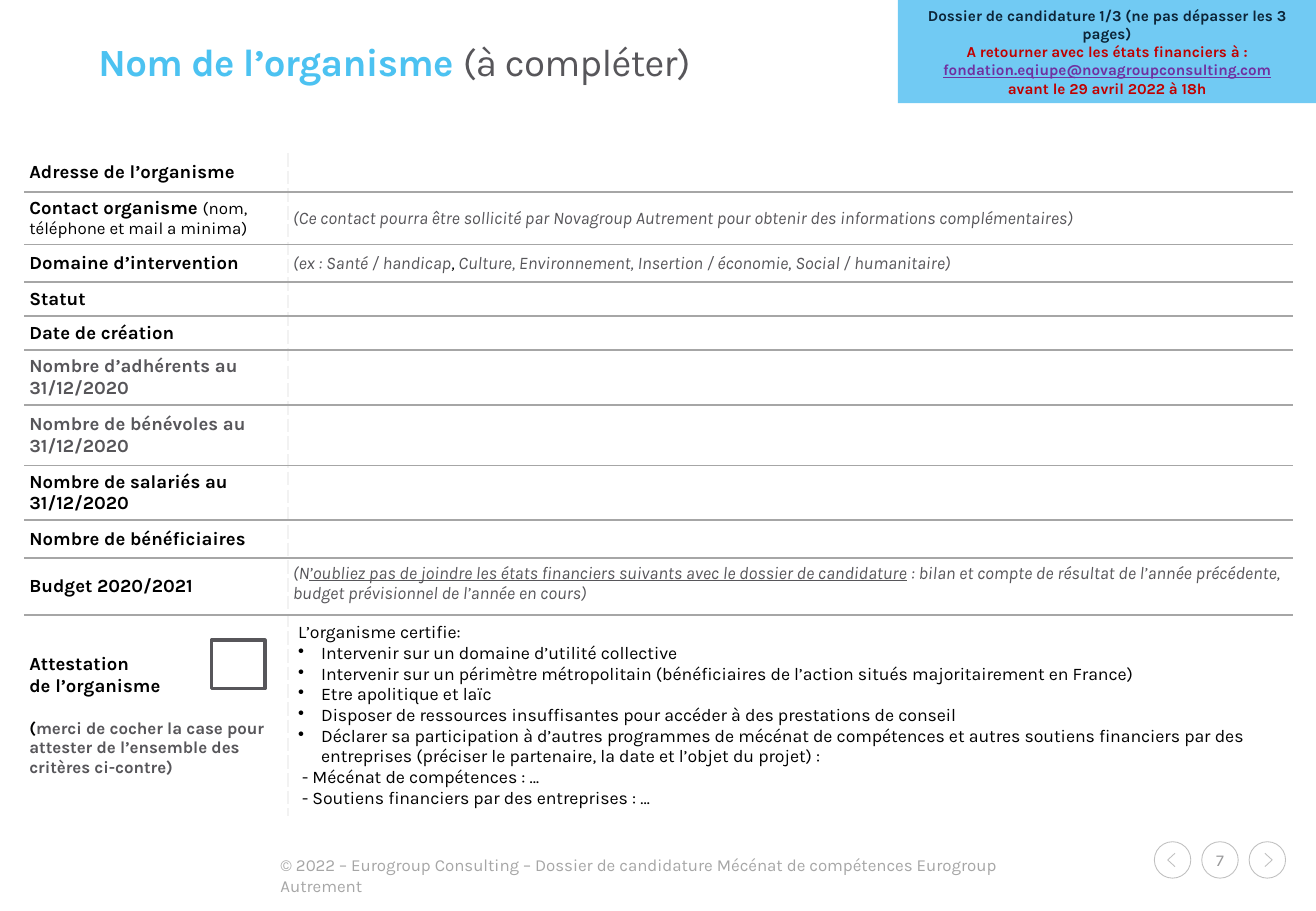
from lxml import etree
from pptx import Presentation
from pptx.dml.color import RGBColor
from pptx.enum.shapes import MSO_SHAPE
from pptx.enum.text import MSO_ANCHOR, PP_ALIGN
from pptx.oxml.ns import qn
from pptx.util import Inches, Pt

RECT, CIRCLE = MSO_SHAPE.RECTANGLE, MSO_SHAPE.OVAL
TOP, MIDDLE = MSO_ANCHOR.TOP, MSO_ANCHOR.MIDDLE
LEFT, CENTER = PP_ALIGN.LEFT, PP_ALIGN.CENTER

COLORS = {
    "white": "FFFFFF", "black": "000000", "grey": "57565A", "rule": "A6A6A6",
    "dash": "F2F2F2", "button": "BFBFBF", "number": "9A9A9B", "title": "4CC2F1",
    "banner": "71CAF3", "navy": "0C2437", "red": "C00000", "purple": "7030A0",
}
FONT = "Karla"
WIDTH, HEIGHT = 10.83, 7.5


def grid(units):
    """Length of a number of grid columns or rows, twelve to the inch."""
    return Inches(units / 12)


def para(*spans, **style):
    """A paragraph: spans are strings or (string, style changes) pairs."""
    return spans, style


class Page:
    def __init__(self, deck):
        self.slide = deck.slides.add_slide(deck.slide_layouts[6])
        self.shapes = self.slide.shapes

    def color(self, name):
        return RGBColor.from_string(COLORS[name])

    def set_font(self, font, size=None, color=None, bold=None, italic=None, underline=None):
        font.name = FONT
        if size:
            font.size = Pt(size)
        if color:
            font.color.rgb = self.color(color)
        font.bold, font.italic, font.underline = bold, italic, underline

    def set_paras(self, frame, paras, align=LEFT, spacing=None, tracking=None):
        for index, (spans, options) in enumerate(paras):
            style = dict(options)
            item = frame.paragraphs[0] if index == 0 else frame.add_paragraph()
            indent, bullet = style.pop("indent", 0), style.pop("bullet", None)
            before = style.pop("before", None)
            if indent:
                properties = item._p.get_or_add_pPr()
                properties.set("marL", str(grid(indent)))
                if bullet:
                    properties.set("indent", str(-grid(indent)))
                    etree.SubElement(properties, qn("a:buChar"), char=bullet)
            item.alignment = align
            if spacing:
                item.line_spacing = spacing
            if before:
                item.space_before = Pt(before)
            if all(isinstance(span, str) for span in spans):
                self.set_font(item.font, **style)
            for span in spans:
                text, changes = (span, {}) if isinstance(span, str) else span
                run = item.add_run()
                run.text = text
                if len(spans) > 1:
                    self.set_font(run.font, **{**style, **changes})
                if tracking:
                    run._r.get_or_add_rPr().set("spc", str(tracking))

    def text(self, place, paras, anchor=TOP, inset=True, **layout):
        frame = self.shapes.add_textbox(*map(grid, place)).text_frame
        frame.word_wrap = True
        frame.vertical_anchor = anchor
        if not inset:
            frame.margin_left = frame.margin_right = 0
            frame.margin_top = frame.margin_bottom = 0
        self.set_paras(frame, paras, **layout)

    def paint(self, shape, fill, line, weight):
        shape.shadow.inherit = False
        if fill:
            shape.fill.solid()
            shape.fill.fore_color.rgb = self.color(fill)
        else:
            shape.fill.background()
        if line:
            shape.line.color.rgb = self.color(line)
            shape.line.width = Pt(weight)
        else:
            shape.line.fill.background()

    def box(self, kind, place, fill=None, line=None, weight=0.5, paras=(), inset=True):
        shape = self.shapes.add_shape(kind, *map(grid, place))
        self.paint(shape, fill, line, weight)
        frame = shape.text_frame
        frame.vertical_anchor = MIDDLE
        if not inset:
            frame.margin_left = frame.margin_right = 0
        self.set_paras(frame, paras, align=CENTER)

    def outline(self, points, line, weight=0.5):
        start, *rest = [(grid(x), grid(y)) for x, y in points]
        builder = self.shapes.build_freeform(*start)
        builder.add_line_segments(rest, close=False)
        self.paint(builder.convert_to_shape(), None, line, weight)

    def border(self, cell, side, color, dash="solid"):
        line = etree.SubElement(cell._tc.get_or_add_tcPr(), qn("a:ln" + side), w=str(Pt(1)))
        if color:
            fill = etree.SubElement(line, qn("a:solidFill"))
            etree.SubElement(fill, qn("a:srgbClr"), val=COLORS[color])
            etree.SubElement(line, qn("a:prstDash"), val=dash)
        else:
            etree.SubElement(line, qn("a:noFill"))

    def table(self, left, top, columns, rows):
        """Rows are (height, label paragraphs, answer paragraphs, answer anchor)."""
        height = sum(row[0] for row in rows)
        place = map(grid, (left, top, sum(columns), height))
        table = self.shapes.add_table(len(rows), len(columns), *place).table
        table.first_row = table.horz_banding = False
        for column, width in zip(table.columns, columns):
            column.width = grid(width)
        last = len(rows) - 1
        for r, (height, label, answer, anchor) in enumerate(rows):
            table.rows[r].height = grid(height)
            for c, paras in enumerate((label, answer)):
                cell = table.cell(r, c)
                cell.margin_left = grid(1 if r == last and c else 0.5)
                cell.margin_right = cell.margin_top = cell.margin_bottom = grid(0.5)
                cell.vertical_anchor = anchor if c else MIDDLE
                self.border(cell, "L", "dash" if c else None, "sysDash")
                self.border(cell, "R", None if c else "dash", "sysDash")
                self.border(cell, "T", "rule" if r else None)
                self.border(cell, "B", "rule" if r < last else None)
                cell.fill.solid()
                cell.fill.fore_color.rgb = self.color("white")
                self.set_paras(cell.text_frame, paras)
                if not paras:
                    empty = cell.text_frame.paragraphs[0]._p
                    etree.SubElement(empty, qn("a:endParaRPr"), sz="1000")


def label(text, color="black"):
    return [para(text, size=11, color=color, bold=True)]


def hint(*spans):
    return [para(*spans, size=10.5, color="grey", italic=True)]


def certified(text, **layout):
    return para(text, size=10.5, color="black", **layout)


CONTACT = [para("Contact organisme ", ("(nom, téléphone et mail a minima)", {"size": 10, "bold": False}),
                size=11, color="black", bold=True)]
ATTESTATION = label("Attestation") + label("de l’organisme") + [
    para("(", ("merci de cocher la case pour attester de l’ensemble des critères ci-contre)", {"color": "grey"}),
         size=10, color="black", bold=True, before=13)]
CRITERIA = [
    "Intervenir sur un domaine d’utilité collective",
    "Intervenir sur un périmètre métropolitain (bénéficiaires de l’action situés majoritairement en France)",
    "Etre apolitique et laïc",
    "Disposer de ressources insuffisantes pour accéder à des prestations de conseil",
    "Déclarer sa participation à d’autres programmes de mécénat de compétences et autres soutiens financiers "
    "par des entreprises (préciser le partenaire, la date et l’objet du projet) :",
]
SUPPORT = ["- Mécénat de compétences : …", "- Soutiens financiers par des entreprises : …"]
CERTIFICATE = ([certified("L’organisme certifie:")]
               + [certified(text, indent=2.28, bullet="•") for text in CRITERIA]
               + [certified(text, indent=0.4) for text in SUPPORT])
ROWS = [
    (3.84, label("Adresse de l’organisme"), [], MIDDLE),
    (4.68, CONTACT, hint("(Ce contact pourra être sollicité par Novagroup Autrement pour obtenir "
                         "des informations complémentaires)"), MIDDLE),
    (3.72, label("Domaine d’intervention"),
     hint("(ex : Santé / handicap", (", ", {"color": "black"}),
          "Culture, Environnement, Insertion / économie, Social / humanitaire)"), MIDDLE),
    (3.36, label("Statut"), [], MIDDLE),
    (3.36, label("Date de création"), [], MIDDLE),
    (5.16, label("Nombre d’adhérents au 31/12/2020", "grey"), [], MIDDLE),
    (6, label("Nombre de bénévoles au 31/12/2020", "grey"), [], MIDDLE),
    (5.16, label("Nombre de salariés au 31/12/2020"), [], MIDDLE),
    (3.72, label("Nombre de bénéficiaires"), [], MIDDLE),
    (5.64, label("Budget 2020/2021"),
     hint("(N", ("’oubliez pas de joindre les états financiers suivants avec le dossier de candidature",
                 {"underline": True}),
          " : bilan et compte de résultat de l’année précédente, budget prévisionnel de l’année en cours)"), TOP),
    (19.8, ATTESTATION, CERTIFICATE, MIDDLE),
]


def main():
    deck = Presentation()
    deck.slide_width, deck.slide_height = Inches(WIDTH), Inches(HEIGHT)
    page = Page(deck)

    # Footer and page buttons
    page.text((26.52, 83.88, 77.64, 3.24), [
        para("© 2022 – Eurogroup Consulting – Dossier de candidature Mécénat de compétences Eurogroup Autrement",
             size=10, color="rule")])
    size, pitch, first, top = 3.6, 4.68, 114, 83.16
    number = [para("7", size=9.8, color="number")]
    for step, paras in enumerate(([], number, [])):
        left = first + step * pitch
        page.box(CIRCLE, (left, top, size, size), line="button", paras=paras, inset=False)
        side = step - 1
        if side:
            x, y = left + size / 2, top + size / 2
            page.outline([(x - side * 0.24, y - 0.66), (x + side * 0.48, y), (x - side * 0.24, y + 0.66)], "button")

    # Title
    page.text((9.72, 4.2, 110.52, 4.44), [
        para(("Nom de l’organisme ", {"color": "title", "bold": True}), "(à compléter)", size=22.8, color="grey")],
        anchor=MIDDLE, inset=False, spacing=0.86, tracking=-40)

    # Application form
    page.table(2.4, 15.12, (26.04, 99.24), ROWS)
    page.box(RECT, (20.88, 63.24, 5.28, 4.8), fill="white", line="grey", weight=2)

    # Return instructions
    page.box(RECT, (88.68, 0, 41.28, 10.2), fill="banner", paras=[
        para("Dossier de candidature 1/3 (ne pas dépasser les 3 pages)", size=9, color="navy", bold=True),
        para("A retourner avec les états financiers à :", size=9, color="red", bold=True),
        para("fondation.eqiupe@novagroupconsulting.com", size=9, color="purple", bold=True, underline=True),
        para("avant le 29 avril 2022 à 18h", size=9, color="red", bold=True)])

    deck.save("out.pptx")


if __name__ == "__main__":
    main()
